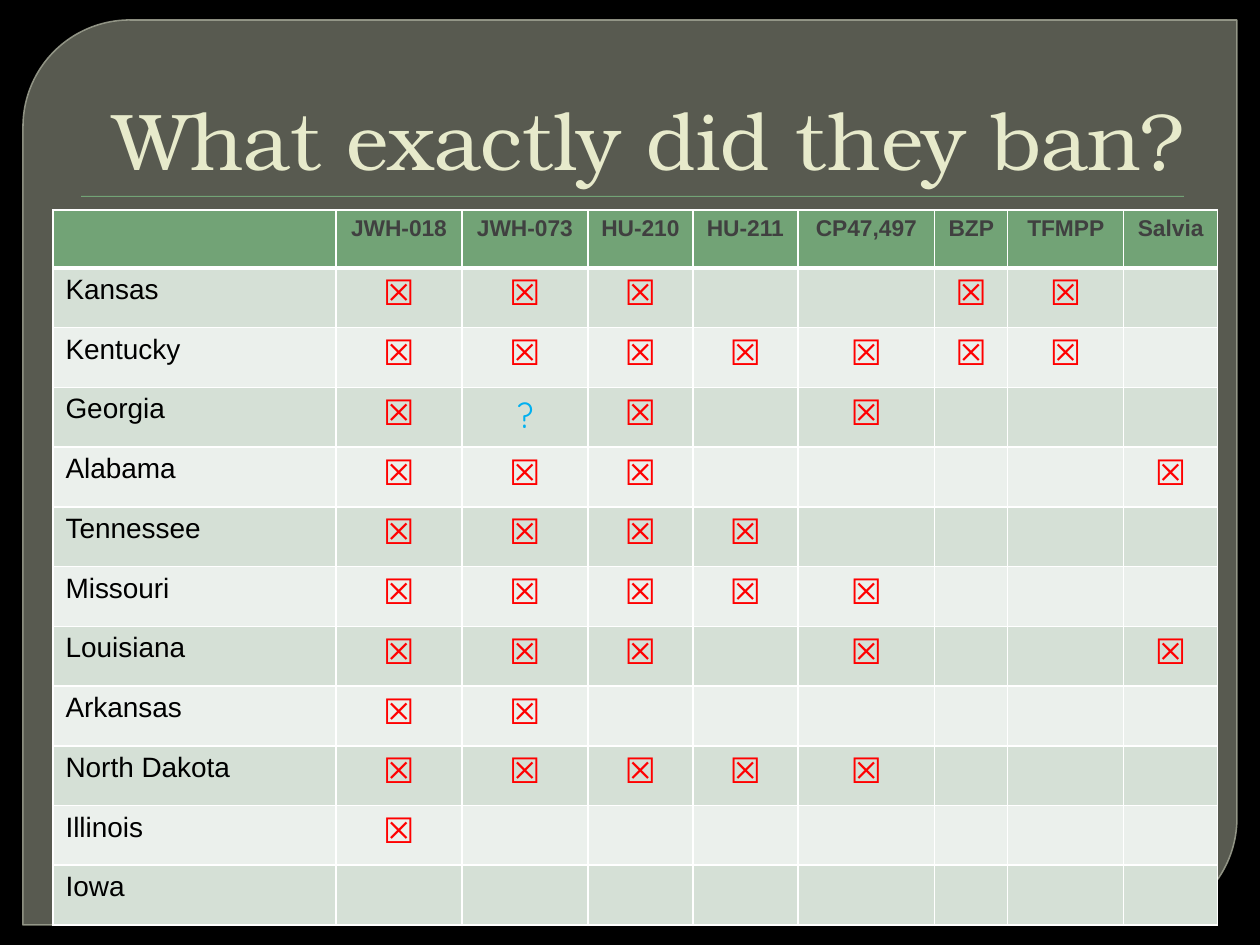
from pptx import Presentation
from pptx.dml.color import RGBColor
from pptx.enum.shapes import MSO_SHAPE as Preset
from pptx.enum.text import MSO_ANCHOR as Anchor, MSO_AUTO_SIZE as AutoSize, PP_ALIGN as Align
from pptx.oxml import parse_xml
from pptx.oxml.ns import nsdecls
from pptx.oxml.xmlchemy import OxmlElement
from pptx.util import Pt

EMU_PER_PX = 914400 // 126

COLUMNS = {
    "": 283, "JWH-018": 126, "JWH-073": 126, "HU-210": 105, "HU-211": 105,
    "CP47,497": 137, "BZP": 73, "TFMPP": 116, "Salvia": 94,
}
BANS = {
    "Kansas": "xxx--xx-",
    "Kentucky": "xxxxxxx-",
    "Georgia": "x?x-x---",
    "Alabama": "xxx----x",
    "Tennessee": "xxxx----",
    "Missouri": "xxxxx---",
    "Louisiana": "xxx-x--x",
    "Arkansas": "xx------",
    "North Dakota": "xxxxx---",
    "Illinois": "x-------",
    "Iowa": "--------",
}
MARKS = {"x": ("☒", "Arial", "FF0000"), "?": ("?", "Quicksand", "00B0F0")}
HEADER_FILL = "72A376"
BAND_FILLS = ("D5E0D6", "EBF0EC")


def px(length):
    return length * EMU_PER_PX


def paint(fill, color, opacity=100):
    fill.solid()
    fill.fore_color.rgb = RGBColor.from_string(color)
    if opacity < 100:
        alpha = OxmlElement("a:alpha")
        alpha.set("val", str(opacity * 1000))
        fill._xPr.find(".//{*}solidFill/{*}srgbClr").append(alpha)


def write(frame, text, size, color, font="Arial", align=Align.LEFT, bold=False):
    para = frame.paragraphs[0]
    para.alignment = align
    span = para.add_run()
    span.text = text
    span.font.size = Pt(size)
    span.font.name = font
    span.font.bold = bold
    paint(span.font.fill, color)


def add_panel(page):
    panel = page.shapes.add_shape(
        Preset.ROUND_2_DIAG_RECTANGLE, px(23), px(20), px(1214), px(905))
    panel.adjustments[0] = 0.118
    panel.adjustments[1] = 0
    panel.shadow.inherit = False
    paint(panel.fill, "888B7B", 65)
    panel.line.width = Pt(0.87)
    paint(panel.line.fill, "9DA090", 88)


def add_title_rule(page):
    rule = page.shapes.add_shape(Preset.RECTANGLE, px(81), px(196), px(1103), px(1))
    paint(rule.fill, HEADER_FILL)
    rule.line.fill.background()
    rule.element.spPr.append(parse_xml(
        f'<a:effectLst {nsdecls("a")}>'
        '<a:outerShdw blurRad="12700" dist="12700" dir="5400000">'
        '<a:srgbClr val="000000"><a:alpha val="75000"/></a:srgbClr>'
        '</a:outerShdw></a:effectLst>'))


def place_title(page, text):
    title = page.shapes.title
    title.left, title.top, title.width, title.height = px(63), px(35), px(1134), px(158)
    frame = title.text_frame
    frame.auto_size = AutoSize.NONE
    frame.word_wrap = True
    frame.vertical_anchor = Anchor.BOTTOM
    write(frame, text, 46, "E7EACB", "TeX Gyre Bonum", Align.RIGHT)
    title.element.getparent().append(title.element)


def style_cell(cell, color, top=1, bottom=1):
    props = cell._tc.get_or_add_tcPr()
    for side, width in (("L", 1), ("R", 1), ("T", top), ("B", bottom)):
        props.append(parse_xml(
            f'<a:ln{side} {nsdecls("a")} w="{Pt(width)}"><a:solidFill>'
            f'<a:srgbClr val="FFFFFF"/></a:solidFill></a:ln{side}>'))
    paint(cell.fill, color)


def add_header(table):
    for cell, (substance, width) in zip(table.rows[0].cells, COLUMNS.items()):
        style_cell(cell, HEADER_FILL, bottom=3)
        if substance:
            write(cell.text_frame, substance, 13, "404040", align=Align.CENTER, bold=True)


def add_state(table, index, state, bans):
    cells = list(table.rows[index].cells)
    for cell in cells:
        style_cell(cell, BAND_FILLS[(index - 1) % 2], top=3 if index == 1 else 1)
    write(cells[0].text_frame, state, 16, "000000")
    for cell, ban in zip(cells[1:], bans):
        if ban in MARKS:
            mark, font, color = MARKS[ban]
            write(cell.text_frame, mark, 20, color, font, Align.CENTER)


def add_ban_table(page):
    table = page.shapes.add_table(
        len(BANS) + 1, len(COLUMNS), px(53), px(210),
        px(sum(COLUMNS.values())), px(715)).table
    for column, width in zip(table.columns, COLUMNS.values()):
        column.width = px(width)
    for row in table.rows:
        row.height = px(657) // len(BANS)
    table.rows[0].height = px(58)
    add_header(table)
    for index, (state, bans) in enumerate(BANS.items(), start=1):
        add_state(table, index, state, bans)


def main():
    deck = Presentation()
    deck.slide_width, deck.slide_height = px(1260), px(945)
    page = deck.slides.add_slide(deck.slide_layouts[5])
    paint(page.background.fill, "000000")
    add_panel(page)
    add_title_rule(page)
    place_title(page, "What exactly did they ban?")
    add_ban_table(page)
    deck.save("out.pptx")


if __name__ == "__main__":
    main()
